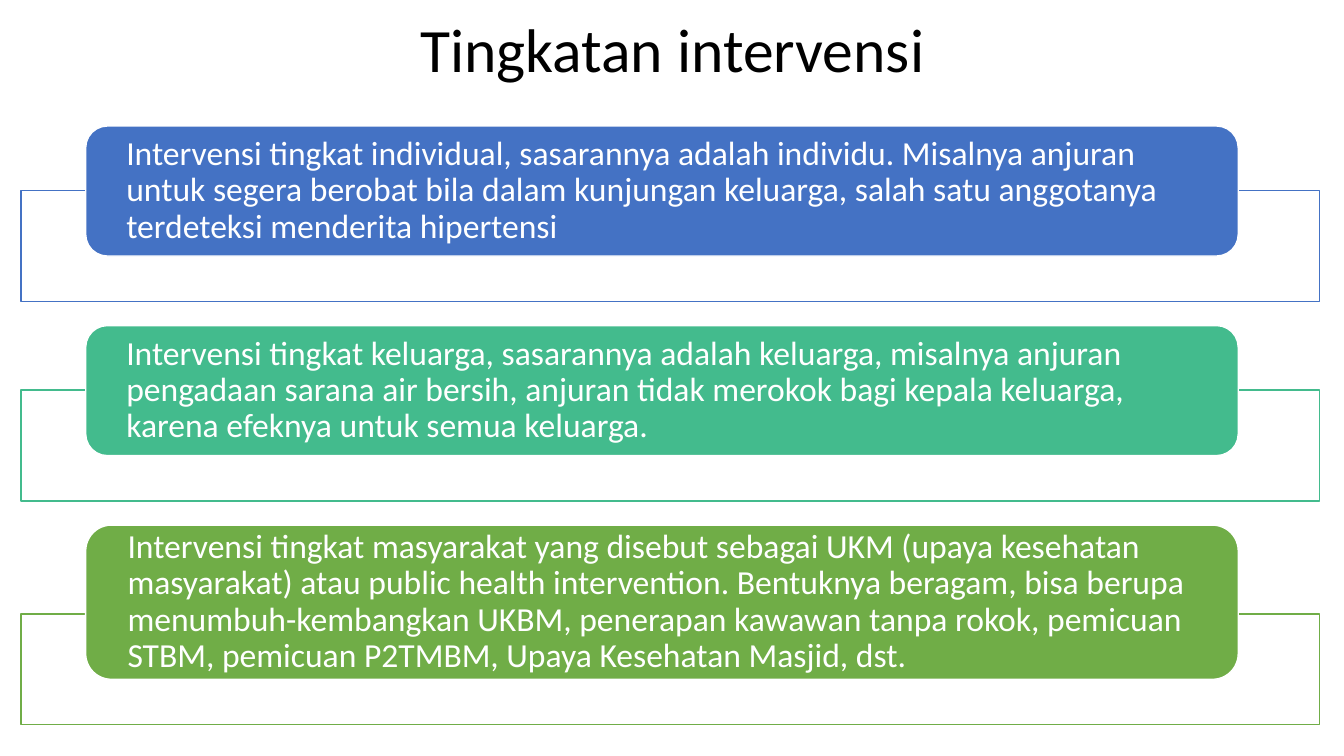
import pptx
import pptx.dml.color
import pptx.enum.shapes
import pptx.enum.text
import pptx.util

SHAPES = pptx.enum.shapes.MSO_SHAPE
ALIGN = pptx.enum.text.PP_ALIGN
INCH = pptx.util.Inches

WIDTH, HEIGHT = 13.33, 7.5
LEVELS_LEFT, LEVELS_TOP, LEVELS_WIDTH = 0.21, 1.25, 12.88
FRAME_HEIGHT = 1.1    # outlined frame behind each banner
OVERHANG = 0.45       # frame below its banner
LEVEL_GAP = 0.24
BANNER_INDENT, BANNER_SHARE = 0.64, 0.8875

# Text, colour and banner height of each level
LEVELS = [
    ("Intervensi tingkat individual, sasarannya adalah individu. Misalnya anjuran "
     "untuk segera berobat bila dalam kunjungan keluarga, salah satu anggotanya "
     "terdeteksi menderita hipertensi", "4472C4", 1.29),
    ("Intervensi tingkat keluarga, sasarannya adalah keluarga, misalnya anjuran "
     "pengadaan sarana air bersih, anjuran tidak merokok bagi kepala keluarga, "
     "karena efeknya untuk semua keluarga.", "43BB8D", 1.29),
    ("Intervensi tingkat masyarakat yang disebut sebagai UKM (upaya kesehatan "
     "masyarakat) atau public health intervention. Bentuknya beragam, bisa berupa "
     "menumbuh-kembangkan UKBM, penerapan kawawan tanpa rokok, pemicuan STBM, "
     "pemicuan P2TMBM, Upaya Kesehatan Masjid, dst.", "70AD47", 1.53),
]


def color(value):
    return pptx.dml.color.RGBColor.from_string(value)


def write(shape, text, size, text_color, alignment, side_margin):
    frame = shape.text_frame
    frame_format = {
        "word_wrap": True,
        "vertical_anchor": pptx.enum.text.MSO_ANCHOR.MIDDLE,
        "margin_left": INCH(side_margin), "margin_right": INCH(side_margin),
        "margin_top": 0, "margin_bottom": 0,
    }
    paragraph = frame.paragraphs[0]
    run = paragraph.add_run()
    run.text = text
    run.font.color.rgb = color(text_color)
    formats = [
        (frame, frame_format),
        (paragraph, {"alignment": alignment, "line_spacing": 0.9}),
        (run.font, {"name": "Calibri", "size": pptx.util.Pt(size)}),
    ]
    for target, values in formats:
        for name, value in values.items():
            setattr(target, name, value)


def add_panel(slide, kind, box, fill, line):
    shape = slide.shapes.add_shape(kind, *map(INCH, box))
    shape.shadow.inherit = False
    shape.fill.solid()
    shape.fill.fore_color.rgb = color(fill)
    shape.line.color.rgb = color(line)
    shape.line.width = pptx.util.Pt(1)
    return shape


def add_title(slide, text, box):
    title = slide.shapes.add_textbox(*map(INCH, box))
    write(title, text, 44, "000000", ALIGN.CENTER, 0.1)


def add_level(slide, text, level_color, box):
    left, top, width, height = box
    # Frame along the bottom of the box
    add_panel(slide, SHAPES.RECTANGLE,
              (left, top + height - FRAME_HEIGHT, width, FRAME_HEIGHT),
              "FFFFFF", level_color)
    # Banner along the top, covering part of the frame
    banner = add_panel(slide, SHAPES.ROUNDED_RECTANGLE,
                       (left + BANNER_INDENT, top, width * BANNER_SHARE, height - OVERHANG),
                       level_color, "FFFFFF")
    write(banner, text, 24, "FFFFFF", ALIGN.LEFT, 0.34)


def main():
    presentation = pptx.Presentation()
    presentation.slide_width = INCH(WIDTH)
    presentation.slide_height = INCH(HEIGHT)
    slide = presentation.slides.add_slide(presentation.slide_layouts[6])

    add_title(slide, "Tingkatan intervensi", (0.92, 0, 11.5, 1.04))

    top = LEVELS_TOP
    for text, level_color, banner_height in LEVELS:
        height = banner_height + OVERHANG
        add_level(slide, text, level_color, (LEVELS_LEFT, top, LEVELS_WIDTH, height))
        top += height + LEVEL_GAP

    presentation.save("out.pptx")


if __name__ == "__main__":
    main()
